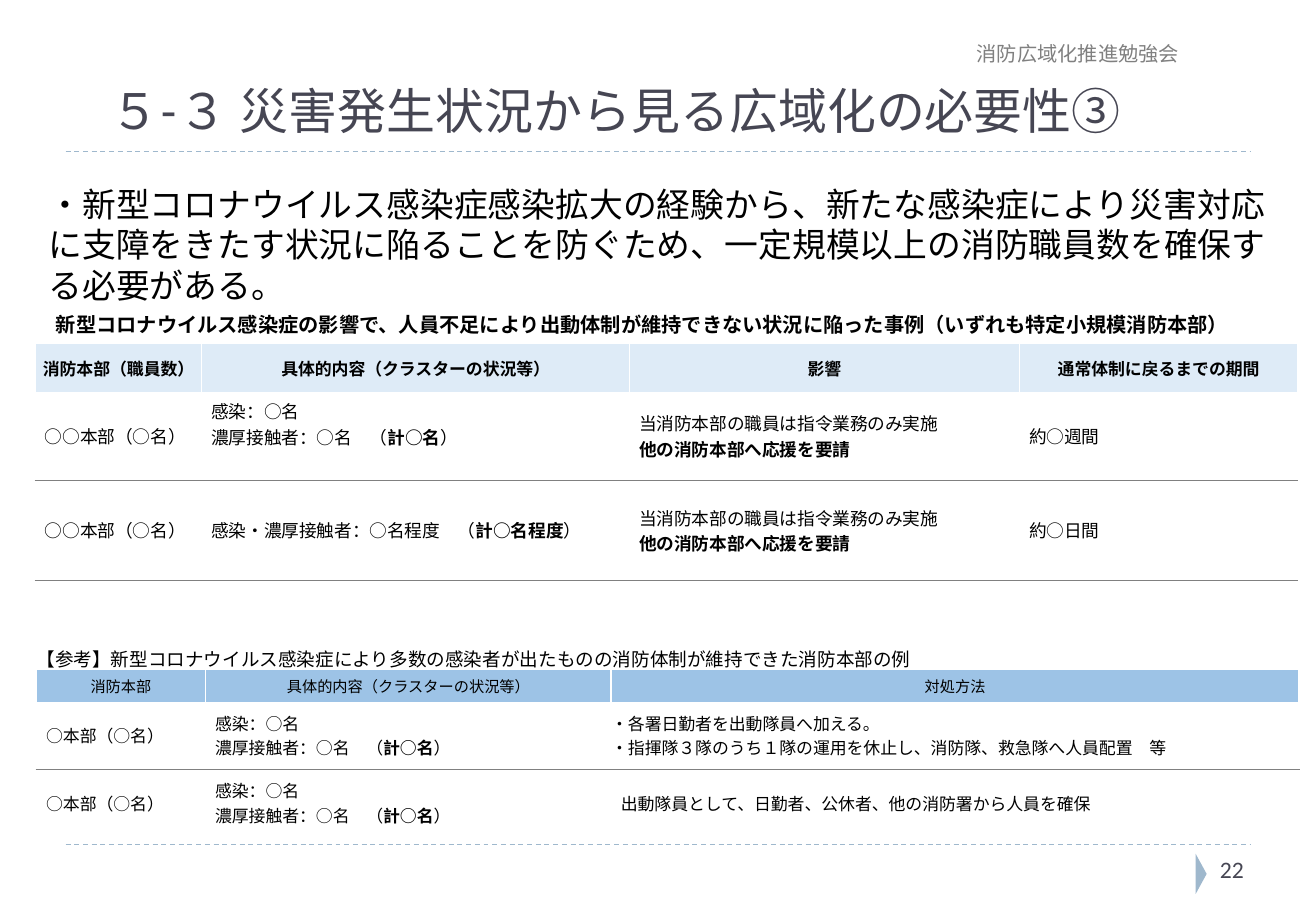
"""Build the slide on infection cases and the need for wider fire service areas."""
from dataclasses import dataclass
from typing import Any

from lxml import etree
from pptx import Presentation
from pptx.dml.color import RGBColor
from pptx.enum.dml import MSO_LINE_DASH_STYLE as Dash
from pptx.enum.shapes import MSO_CONNECTOR as Connector, MSO_SHAPE as Preset
from pptx.enum.text import MSO_ANCHOR as Anchor, PP_ALIGN as Align
from pptx.oxml.ns import qn
from pptx.slide import Slide
from pptx.util import Inches, Pt

WHITE = RGBColor(0xFF, 0xFF, 0xFF)
BLACK = RGBColor(0, 0, 0)
GRAY = RGBColor(0x80, 0x80, 0x80)
SLATE = RGBColor(0x46, 0x46, 0x53)
STEEL = RGBColor(0x9F, 0xB8, 0xCD)
PALE_BLUE = RGBColor(0xDE, 0xEB, 0xF7)
MID_BLUE = RGBColor(0x9D, 0xC3, 0xE6)
TABLE_FONT = "Noto Sans CJK JP"


@dataclass(frozen=True)
class Label:
    text: str
    box: tuple[float, float, float, float]
    size: float
    color: RGBColor
    font: str = "Calibri"
    anchor: Anchor = Anchor.TOP


@dataclass(frozen=True)
class Entry:
    text: str
    left: float = 0.08
    bottom: float = 0


@dataclass(frozen=True)
class Row:
    height: float
    entries: tuple[Entry, ...]
    size: float
    fill: RGBColor = WHITE
    align: Align = Align.LEFT
    rule: RGBColor = WHITE


@dataclass(frozen=True)
class CaseTable:
    left: float
    top: float
    widths: tuple[float, ...]
    rows: tuple[Row, ...]


def entries(*texts: str, left: float = 0.08) -> tuple[Entry, ...]:
    """Wrap texts that share a left margin."""
    return tuple(Entry(text, left) for text in texts)


INFECTED = "感染：○名\n濃厚接触者：○名　（*計○名*）"
IMPACT = "当消防本部の職員は指令業務のみ実施\n*他の消防本部へ応援を要請*"
CLUSTER = "具体的内容（クラスターの状況等）"

LABELS = (
    Label("５-３ 災害発生状況から見る広域化の必要性③", (0.81, 0.41, 9.06, 0.79), 29, SLATE,
          "Roboto Slab", Anchor.BOTTOM),
    Label("消防広域化推進勉強会", (7.94, 0.29, 2.13, 0.3), 12, GRAY),
    Label("・新型コロナウイルス感染症感染拡大の経験から、新たな感染症により災害対応に支障をきたす状況に"
          "陥ることを防ぐため、一定規模以上の消防職員数を確保する必要がある。",
          (0.3, 1.46, 10.41, 1.03), 20, BLACK),
    Label("22", (9.94, 6.99, 0.77, 0.4), 14, SLATE),
)

TABLES = (
    CaseTable(0.3, 5.31, (1.39, 3.34, 5.66), (
        Row(0.2, entries("【参考】新型コロナウイルス感染症により多数の感染者が出たものの"
                         "消防体制が維持できた消防本部の例", left=0), 11),
        Row(0.27, entries("消防本部", CLUSTER, "対処方法", left=0), 9, MID_BLUE, Align.CENTER),
        Row(0.55, (*entries("○本部（○名）", INFECTED),
                   Entry("・各署日勤者を出動隊員へ加える。\n"
                         "・指揮隊３隊のうち１隊の運用を休止し、消防隊、救急隊へ人員配置　等", 0)),
            10, rule=GRAY),
        Row(0.56, entries("○本部（○名）", INFECTED,
                          "出動隊員として、日勤者、公休者、他の消防署から人員を確保"), 10),
    )),
    CaseTable(0.29, 2.5, (1.37, 3.52, 3.21, 2.29), (
        Row(0.33, entries("*新型コロナウイルス感染症の影響で、人員不足により出動体制が維持できない"
                          "状況に陥った事例（いずれも特定小規模消防本部）*", left=0.17), 12),
        Row(0.4, entries("*消防本部（職員数）*", f"*{CLUSTER}*", "*影響*",
                         "*通常体制に戻るまでの期間*", left=0), 10, PALE_BLUE, Align.CENTER),
        Row(0.72, (Entry("○○本部（○名）"), Entry(INFECTED, bottom=0.2),
                   *entries(IMPACT, "約○週間")), 10.5, rule=GRAY),
        Row(0.83, entries("○○本部（○名）", "感染・濃厚接触者：○名程度　（*計○名程度*）",
                          IMPACT, "約○日間"), 10.5, rule=GRAY),
    )),
)


def apply(target: Any, values: dict[str, Any]) -> None:
    """Set each named attribute on the target."""
    for name, value in values.items():
        setattr(target, name, value)


def write(frame: Any, text: str, size: float, color: RGBColor, font: str,
          align: Align = Align.LEFT) -> None:
    """Write paragraphs, with bold parts between asterisks."""
    for number, line in enumerate(text.split("\n")):
        paragraph = frame.add_paragraph() if number else frame.paragraphs[0]
        paragraph.alignment = align
        for index, part in enumerate(line.split("*")):
            if part:
                run = paragraph.add_run()
                run.text = part
                apply(run.font, {"name": font, "size": Pt(size), "bold": index % 2 == 1})
                run.font.color.rgb = color
                etree.SubElement(run.font._element, qn("a:ea"), typeface=font)


def add_label(slide: Slide, label: Label) -> None:
    """Add a wrapped text box."""
    frame = slide.shapes.add_textbox(*map(Inches, label.box)).text_frame
    apply(frame, {"word_wrap": True, "vertical_anchor": label.anchor})
    write(frame, label.text, label.size, label.color, label.font)


def add_border(cell: Any, side: str, color: RGBColor, width: float) -> None:
    """Add one border line to a cell."""
    properties = cell._tc.get_or_add_tcPr()
    line = etree.SubElement(properties, qn(f"a:ln{side}"), w=str(Pt(width)))
    fill = etree.SubElement(line, qn("a:solidFill"))
    etree.SubElement(fill, qn("a:srgbClr"), val=str(color))


def add_case_table(slide: Slide, case: CaseTable) -> None:
    """Add a table whose first row is a merged caption."""
    size = (sum(case.widths), sum(row.height for row in case.rows))
    table = slide.shapes.add_table(len(case.rows), len(case.widths),
                                   *map(Inches, (case.left, case.top, *size))).table
    apply(table, {"first_row": False, "horz_banding": False})
    for column, width in zip(table.columns, case.widths):
        column.width = Inches(width)
    above = WHITE
    for number, row in enumerate(case.rows):
        table.rows[number].height = Inches(row.height)
        for index in range(len(case.widths)):
            cell = table.cell(number, index)
            for side, color, width in (("L", WHITE, 1), ("R", WHITE, 1), ("T", above, 0.5),
                                       ("B", row.rule, 0.5)):
                add_border(cell, side, color, 0.25 if color == GRAY else width)
            cell.fill.solid()
            cell.fill.fore_color.rgb = row.fill
            entry = row.entries[index] if index < len(row.entries) else Entry("")
            apply(cell, {"margin_left": Inches(entry.left), "margin_right": 0, "margin_top": 0,
                         "margin_bottom": Inches(entry.bottom),
                         "vertical_anchor": Anchor.MIDDLE})
            write(cell.text_frame, entry.text, row.size, BLACK, TABLE_FONT, row.align)
        above = row.rule
    table.cell(0, 0).merge(table.cell(0, len(case.widths) - 1))


def add_divider(slide: Slide, top: float) -> None:
    """Add a dashed line across the slide."""
    divider = slide.shapes.add_connector(
        Connector.STRAIGHT, *map(Inches, (0.54, top, 10.29, top)))
    apply(divider.line, {"width": Pt(0.75), "dash_style": Dash.DASH})
    divider.line.color.rgb = STEEL
    etree.SubElement(divider._element.spPr, qn("a:effectLst"))


def add_page_marker(slide: Slide) -> None:
    """Add the triangle beside the page number."""
    marker = slide.shapes.add_shape(
        Preset.ISOSCELES_TRIANGLE, *map(Inches, (9.72, 7.15, 0.33, 0.09)))
    marker.rotation = 90
    marker.shadow.inherit = False
    marker.fill.solid()
    marker.fill.fore_color.rgb = STEEL
    marker.line.fill.background()


def main() -> None:
    """Build and save the presentation."""
    presentation = Presentation()
    apply(presentation, {"slide_width": Inches(10.83), "slide_height": Inches(7.5)})
    slide = presentation.slides.add_slide(presentation.slide_layouts[6])
    for top in (6.95, 1.25):
        add_divider(slide, top)
    add_page_marker(slide)
    for label in LABELS:
        add_label(slide, label)
    for case in TABLES:
        add_case_table(slide, case)
    presentation.save("out.pptx")


if __name__ == "__main__":
    main()
